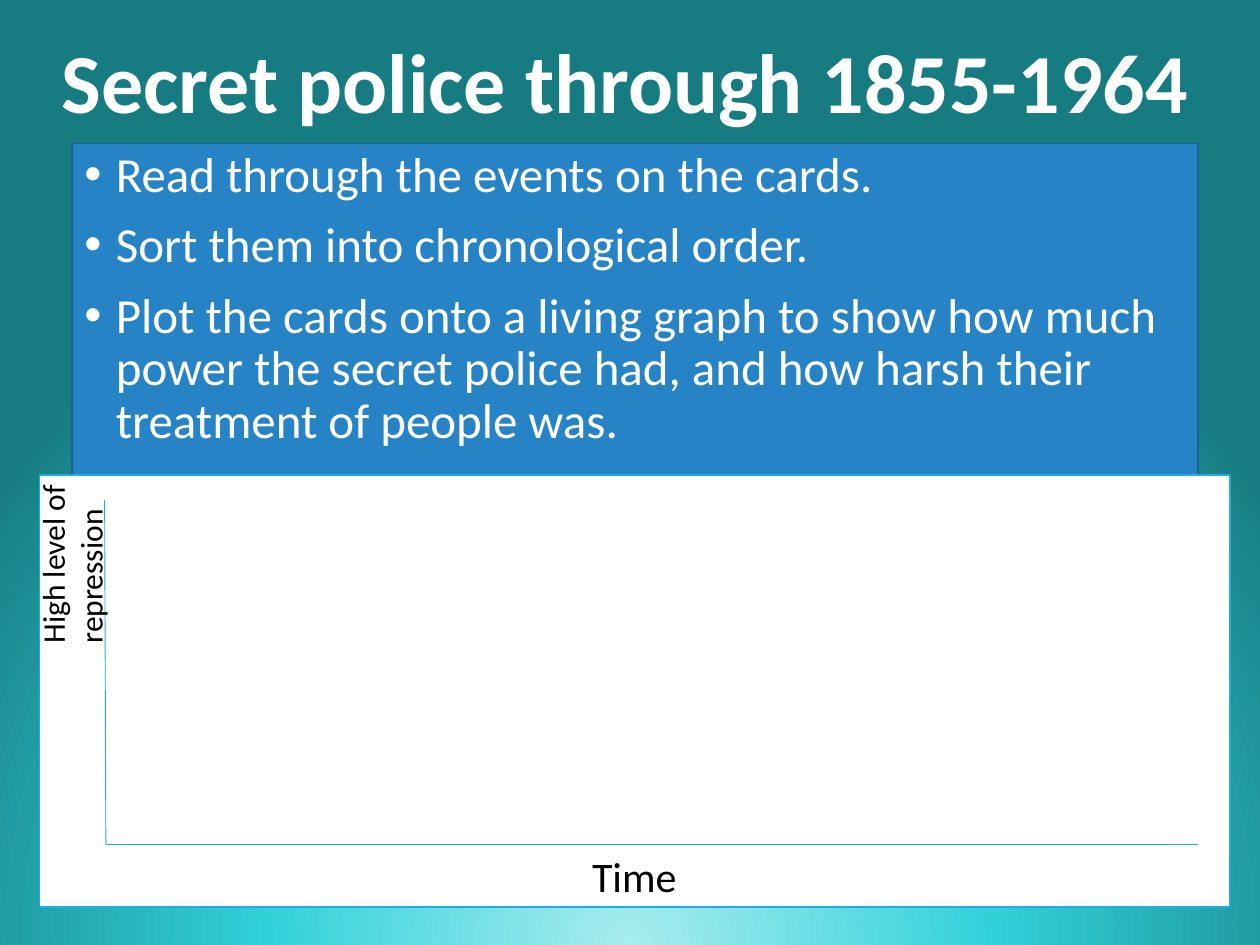
from typing import NamedTuple

from lxml.etree import SubElement
from pptx import Presentation
from pptx.dml.color import RGBColor
from pptx.enum.shapes import MSO_CONNECTOR, MSO_SHAPE
from pptx.enum.text import MSO_ANCHOR, MSO_AUTO_SIZE, PP_ALIGN
from pptx.oxml import parse_xml
from pptx.oxml.ns import nsdecls, qn
from pptx.util import Pt

COLORS = {
    "white": "FFFFFF",
    "black": "000000",
    "panel": "2683C6",
    "panel_edge": "1C6192",
    "axis": "1CADE4",
    "glow": "A8ECEF",
    "aqua": "31D1DA",
    "teal": "177C81",
}
FONT = "Calibri"
TASKS = [
    "Read through the events on the cards.",
    "Sort them into chronological order.",
    "Plot the cards onto a living graph to show how much power the secret police had, "
    "and how harsh their treatment of people was.",
]


class Area(NamedTuple):
    left: float
    top: float
    width: float
    height: float


class Axis(NamedTuple):
    start: tuple[float, float]
    end: tuple[float, float]


class Label(NamedTuple):
    text: str
    area: Area
    size: float
    rotation: float
    wrap: bool


TITLE_AREA = Area(22.3, 16.5, 670.3, 65.5)
TASK_AREA = Area(41, 82, 643.7, 189.4)
GRAPH_AREA = Area(22.5, 271.4, 680.4, 247)
ORIGIN = (60.5, 482.4)
AXES = [Axis((59.8, 285.8), ORIGIN), Axis(ORIGIN, (684.7, 482.4))]
LABELS = [
    Label("High level of repression", Area(-21.6, 286.6, 125.3, 51), 18, 270, True),
    Label("Time", Area(331.2, 482.4, 63.4, 36), 24, 0, False),
]


def color(name: str) -> RGBColor:
    return RGBColor.from_string(COLORS[name])


def place(shape, area: Area) -> None:
    shape.left, shape.top, shape.width, shape.height = map(Pt, area)


def paint(shape, fill: str, edge: str) -> None:
    shape.fill.solid()
    shape.fill.fore_color.rgb = color(fill)
    shape.line.color.rgb = color(edge)
    shape.line.width = Pt(1)


def style(paragraph, size: float, name: str, bold: bool = False) -> None:
    font = paragraph.font
    font.name, font.size, font.bold = FONT, Pt(size), bold
    font.color.rgb = color(name)


def paint_background(page) -> None:
    stops = "".join(
        f'<a:gs pos="{position}"><a:srgbClr val="{COLORS[name]}"/></a:gs>'
        for position, name in [(0, "glow"), (46000, "aqua"), (100000, "teal")]
    )
    background = parse_xml(
        f'<p:bg {nsdecls("p", "a")}><p:bgPr><a:gradFill rotWithShape="1">'
        f'<a:gsLst>{stops}</a:gsLst><a:path path="circle">'
        '<a:fillToRect l="50000" t="130000" r="50000" b="-30000"/></a:path>'
        "</a:gradFill><a:effectLst/></p:bgPr></p:bg>"
    )
    page.element.cSld.insert(0, background)


def write_title(page) -> None:
    title = page.shapes.title
    place(title, TITLE_AREA)
    frame = title.text_frame
    frame.text = "Secret police through 1855-1964"
    frame.vertical_anchor = MSO_ANCHOR.MIDDLE
    frame.auto_size = MSO_AUTO_SIZE.NONE
    paragraph = frame.paragraphs[0]
    paragraph.alignment = PP_ALIGN.CENTER
    paragraph.line_spacing = 0.9
    style(paragraph, 48, "white", bold=True)


def write_tasks(page) -> None:
    body = page.placeholders[1]
    place(body, TASK_AREA)
    paint(body, "panel", "panel_edge")
    frame = body.text_frame
    frame.text = "\n".join(TASKS)
    frame.auto_size = MSO_AUTO_SIZE.NONE
    for paragraph in frame.paragraphs:
        paragraph.line_spacing = 0.9
        paragraph.space_before = Pt(10)
        style(paragraph, 28, "white")
        properties = paragraph._p.get_or_add_pPr()
        properties.set("marL", str(Pt(18)))
        properties.set("indent", str(Pt(-18)))


def draw_axis(page, axis: Axis) -> None:
    line = page.shapes.add_connector(
        MSO_CONNECTOR.STRAIGHT, *map(Pt, axis.start + axis.end)
    )
    line.line.color.rgb = color("axis")
    line.line.width = Pt(0.5)
    SubElement(line._element.spPr, qn("a:effectLst"))


def draw_label(page, label: Label) -> None:
    box = page.shapes.add_textbox(*map(Pt, label.area))
    box.rotation = label.rotation
    frame = box.text_frame
    frame.word_wrap = label.wrap
    frame.auto_size = MSO_AUTO_SIZE.SHAPE_TO_FIT_TEXT
    frame.text = label.text
    style(frame.paragraphs[0], label.size, "black")


def draw_graph(page) -> None:
    panel = page.shapes.add_shape(MSO_SHAPE.RECTANGLE, *map(Pt, GRAPH_AREA))
    panel.shadow.inherit = False
    paint(panel, "white", "axis")
    for axis in AXES:
        draw_axis(page, axis)
    for label in LABELS:
        draw_label(page, label)


def main() -> None:
    deck = Presentation()
    deck.slide_width, deck.slide_height = Pt(720), Pt(540)
    page = deck.slides.add_slide(deck.slide_layouts[1])
    paint_background(page)
    write_title(page)
    write_tasks(page)
    draw_graph(page)
    deck.save("out.pptx")


if __name__ == "__main__":
    main()
